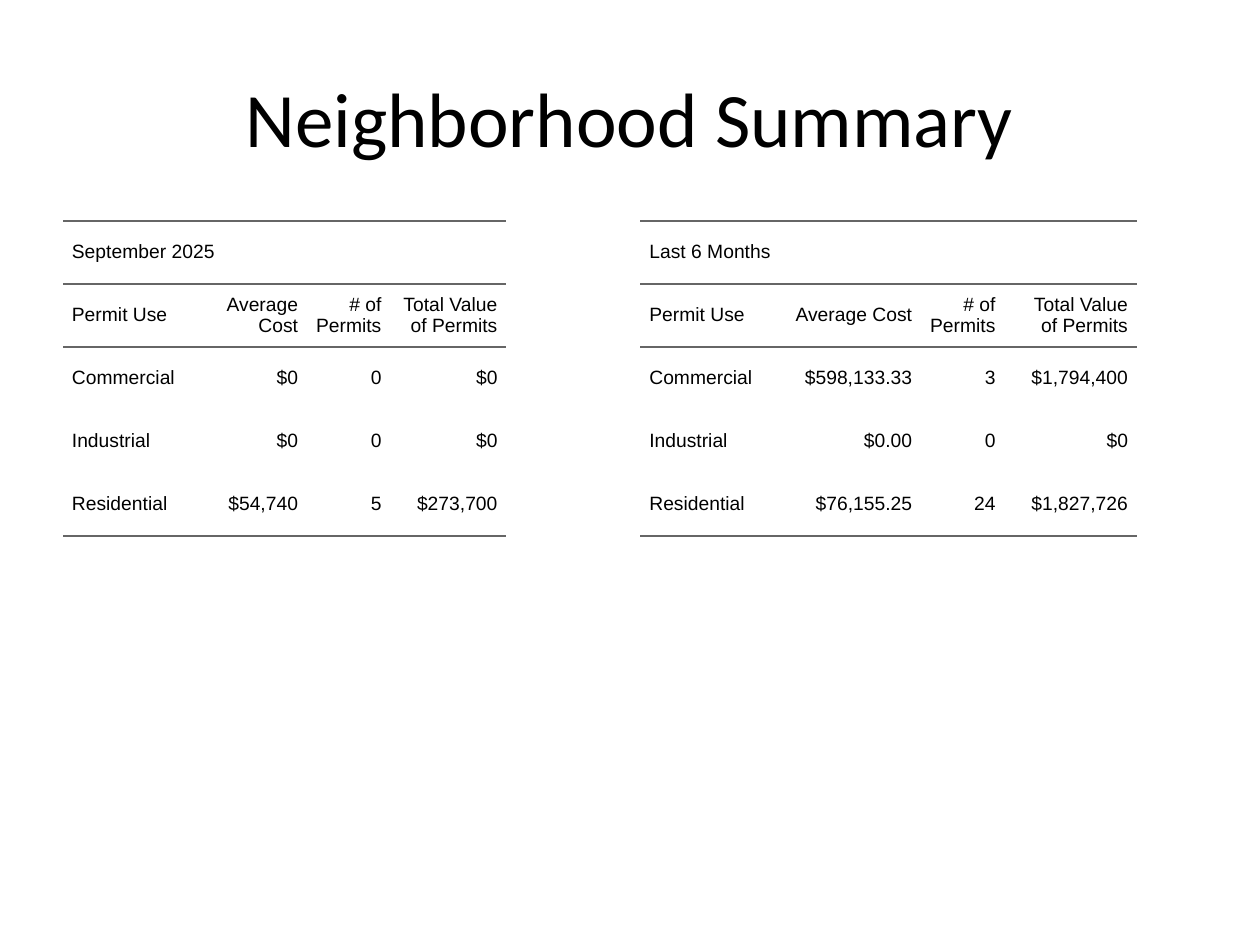
from lxml import etree
from pptx import Presentation
from pptx import util as u
from pptx.dml.color import RGBColor
from pptx.enum import text
from pptx.oxml import ns

BLACK = RGBColor(0, 0, 0)
GRAY = RGBColor(0x66, 0x66, 0x66)
PLAIN = "{2D5ABB26-0587-4C30-8999-92F81FD0307C}"
HEAD = ["Permit Use", "Average Cost", "# of Permits", "Total Value of Permits"]
USES = ["Commercial", "Industrial", "Residential"]
ROW = 1.27


def assign(item, form):
    for name, value in form.items():
        setattr(item, name, value)


def style(run, face, size):
    assign(run.font, {"name": face, "size": u.Pt(size)})
    run.font.color.rgb = BLACK


def rule(cell, side):
    line = etree.SubElement(cell._tc.get_or_add_tcPr(), ns.qn("a:ln" + side), w=str(u.Pt(1.5)))
    fill = etree.SubElement(line, ns.qn("a:solidFill"))
    etree.SubElement(fill, ns.qn("a:srgbClr"), val=str(GRAY))


def title(slide, words, left, top, width, height):
    box = slide.shapes.add_textbox(u.Cm(left), u.Cm(top), u.Cm(width), u.Cm(height))
    frame = box.text_frame
    assign(frame, {"word_wrap": True, "vertical_anchor": text.MSO_ANCHOR.MIDDLE})
    para = frame.paragraphs[0]
    para.alignment = text.PP_ALIGN.CENTER
    run = para.add_run()
    run.text = words
    style(run, "Calibri", 44)


def fill_cell(cell, words, align):
    assign(cell, {
        "margin_left": u.Cm(0.18), "margin_right": u.Cm(0.18),
        "margin_top": 0, "margin_bottom": 0,
        "vertical_anchor": text.MSO_ANCHOR.MIDDLE,
    })
    para = cell.text_frame.paragraphs[0]
    assign(para, {"alignment": align, "space_before": u.Pt(5), "space_after": u.Pt(5)})
    run = para.add_run()
    run.text = words
    style(run, "Arial", 11)


def summary(slide, period, values, widths, left, top):
    rows = [[period], HEAD] + [[use, *row] for use, row in zip(USES, values)]
    frame = slide.shapes.add_table(
        len(rows), len(HEAD), u.Cm(left), u.Cm(top),
        u.Cm(sum(widths)), u.Cm(ROW * len(rows)))
    table = frame.table
    assign(table, {"first_row": False, "horz_banding": False})
    table._tbl.tblPr.find(ns.qn("a:tableStyleId")).text = PLAIN
    for col, width in zip(table.columns, widths):
        col.width = u.Cm(width)
    table.cell(0, 0).merge(table.cell(0, len(HEAD) - 1))
    for r, row in enumerate(rows):
        table.rows[r].height = u.Cm(ROW)
        for c in range(len(HEAD)):
            cell = table.cell(r, c)
            if r < 2:
                rule(cell, "T")
            if r < 2 or r == len(rows) - 1:
                rule(cell, "B")
            cell.fill.background()
            if c < len(row):
                fill_cell(cell, row[c], text.PP_ALIGN.RIGHT if c else text.PP_ALIGN.LEFT)


def main():
    deck = Presentation()
    assign(deck, {"slide_width": u.Cm(25.4), "slide_height": u.Cm(19.05)})
    slide = deck.slides.add_slide(deck.slide_layouts[6])
    month = [["$0", "0", "$0"], ["$0", "0", "$0"], ["$54,740", "5", "$273,700"]]
    half = [["$598,133.33", "3", "$1,794,400"], ["$0.00", "0", "$0"],
            ["$76,155.25", "24", "$1,827,726"]]
    summary(slide, "September 2025", month, [2.79, 2.13, 1.68, 2.34], 1.27, 4.45)
    summary(slide, "Last 6 Months", half, [2.79, 2.87, 1.68, 2.67], 12.91, 4.45)
    title(slide, "Neighborhood Summary", 1.27, 0.76, 22.86, 3.18)
    deck.save("out.pptx")


if __name__ == "__main__":
    main()
